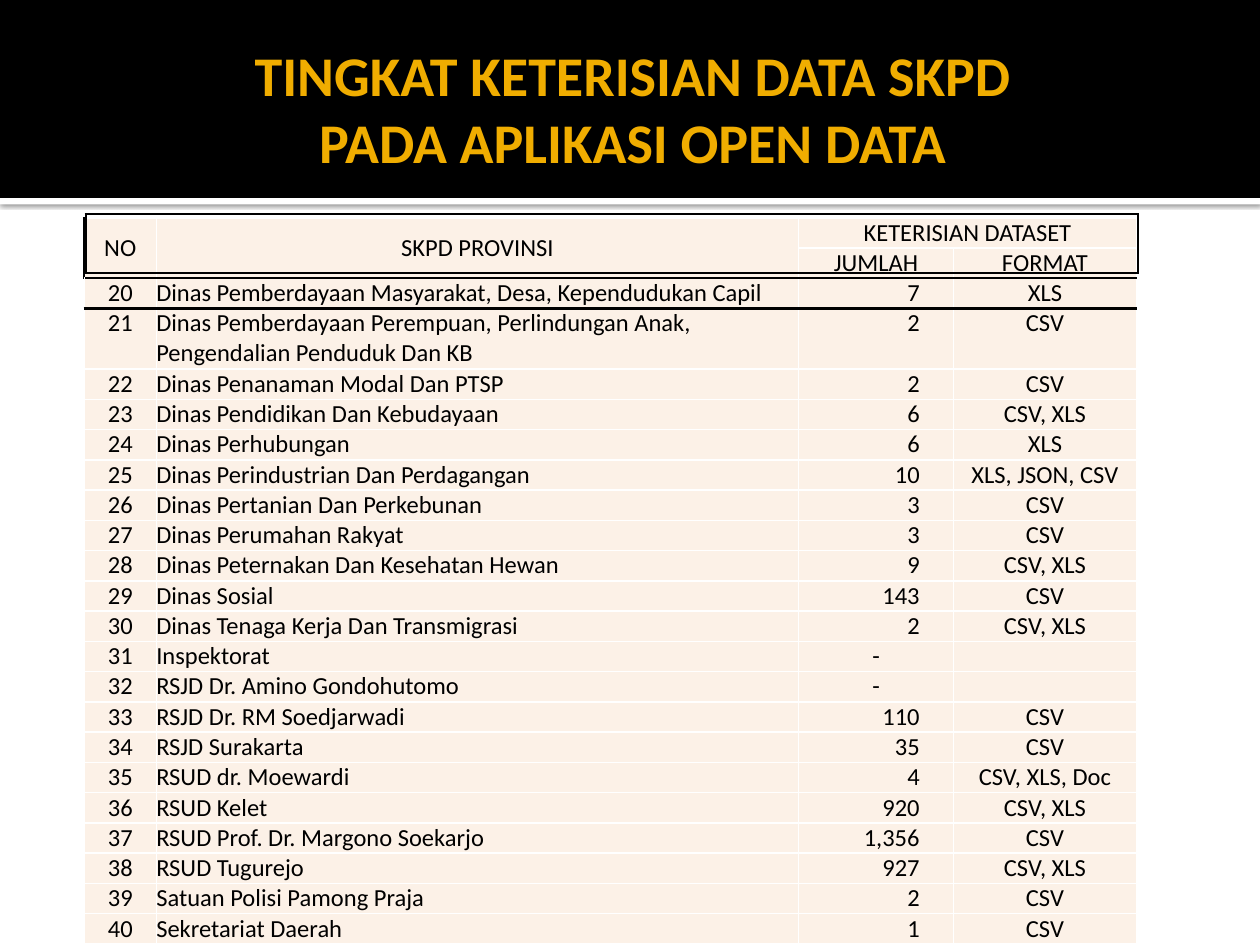
import pptx
import pptx.dml.color
import pptx.enum.shapes
import pptx.enum.text
import pptx.oxml
import pptx.oxml.ns
import pptx.util
from pptx.util import Cm, Pt

COLORS = {"black": "000000", "white": "FFFFFF", "gold": "F0AD00", "cream": "FCF1E7"}
FONT = "Calibri"
ALIGN = pptx.enum.text.PP_ALIGN
ANCHOR = pptx.enum.text.MSO_ANCHOR
ROW_H = 0.61
COL_W = [1.45, 12.95, 3.12, 3.69]
COL_ALIGN = [ALIGN.CENTER, ALIGN.LEFT, ALIGN.RIGHT, ALIGN.CENTER]
FIRST_NO = 20

AGENCIES = [
    ("Dinas Pemberdayaan Masyarakat, Desa, Kependudukan Capil", "7", "XLS"),
    ("Dinas Pemberdayaan Perempuan, Perlindungan Anak, Pengendalian Penduduk Dan KB",
     "2", "CSV"),
    ("Dinas Penanaman Modal Dan PTSP", "2", "CSV"),
    ("Dinas Pendidikan Dan Kebudayaan", "6", "CSV, XLS"),
    ("Dinas Perhubungan", "6", "XLS"),
    ("Dinas Perindustrian Dan Perdagangan", "10", "XLS, JSON, CSV"),
    ("Dinas Pertanian Dan Perkebunan", "3", "CSV"),
    ("Dinas Perumahan Rakyat", "3", "CSV"),
    ("Dinas Peternakan Dan Kesehatan Hewan", "9", "CSV, XLS"),
    ("Dinas Sosial", "143", "CSV"),
    ("Dinas Tenaga Kerja Dan Transmigrasi", "2", "CSV, XLS"),
    ("Inspektorat", "-", ""),
    ("RSJD Dr. Amino Gondohutomo", "-", ""),
    ("RSJD Dr. RM Soedjarwadi", "110", "CSV"),
    ("RSJD Surakarta", "35", "CSV"),
    ("RSUD dr. Moewardi", "4", "CSV, XLS, Doc"),
    ("RSUD Kelet", "920", "CSV, XLS"),
    ("RSUD Prof. Dr. Margono Soekarjo", "1,356", "CSV"),
    ("RSUD Tugurejo", "927", "CSV, XLS"),
    ("Satuan Polisi Pamong Praja", "2", "CSV"),
    ("Sekretariat Daerah", "1", "CSV"),
]


def rgb(name):
    return pptx.dml.color.RGBColor.from_string(COLORS[name])


def add_band(s, top, height, color):
    sp = s.shapes.add_shape(pptx.enum.shapes.MSO_SHAPE.RECTANGLE,
                            0, Cm(top), Cm(25.4), Cm(height))
    sp.shadow.inherit = False
    sp.fill.solid()
    sp.fill.fore_color.rgb = rgb(color)
    sp.line.fill.background()
    return sp


def add_shadow(sp):
    """Give the shape a soft shadow straight below it."""
    effects = sp._element.spPr.find(pptx.oxml.ns.qn("a:effectLst"))
    effects.append(pptx.oxml.parse_xml(
        f'<a:outerShdw {pptx.oxml.ns.nsdecls("a")} blurRad="{Pt(2.5)}" dist="{Pt(0.8)}" '
        f'dir="5400000" rotWithShape="0"><a:srgbClr val="{COLORS["black"]}">'
        '<a:alpha val="60000"/></a:srgbClr></a:outerShdw>'))


def add_title(s, text):
    tf = s.shapes.add_textbox(Cm(1.27), Cm(0.43), Cm(22.86), Cm(3.48)).text_frame
    tf.word_wrap = True
    tf.vertical_anchor = ANCHOR.MIDDLE
    tf.margin_left = Cm(0.25)
    tf.margin_right = tf.margin_top = tf.margin_bottom = Cm(0.13)
    p = tf.paragraphs[0]
    p.text = text
    p.alignment = ALIGN.CENTER
    for r in p.runs:
        r.font.name, r.font.size, r.font.bold = FONT, Pt(32), True
        r.font.color.rgb = rgb("gold")


def set_borders(cell, color, width, **overrides):
    """Line all four sides; overrides such as B=("black", 1.5) change one side."""
    tcPr = cell._tc.get_or_add_tcPr()
    for i, side in enumerate("LRTB"):
        c, w = overrides.get(side, (color, width))
        tcPr.insert(i, pptx.oxml.parse_xml(
            f'<a:ln{side} {pptx.oxml.ns.nsdecls("a")} w="{Pt(w)}"><a:solidFill>'
            f'<a:srgbClr val="{COLORS[c]}"/></a:solidFill></a:ln{side}>'))


def fill_cell(cell, text, align, anchor=ANCHOR.TOP, right=0):
    cell.margin_left = cell.margin_top = cell.margin_bottom = 0
    cell.margin_right = Cm(right)
    cell.vertical_anchor = anchor
    p = cell.text_frame.paragraphs[0]
    p.text = text
    p.alignment = align
    for r in p.runs:
        r.font.name, r.font.size = FONT, Pt(14)
        r.font.color.rgb = rgb("black")
    if not text:
        p._p.get_or_add_endParaRPr().set("sz", "1400")


def add_plain_table(s, left, top, widths, heights):
    table = s.shapes.add_table(len(heights), len(widths), Cm(left), Cm(top),
                               Cm(sum(widths)), Cm(sum(heights))).table
    table.first_row = table.horz_banding = False
    for col, w in zip(table.columns, widths):
        col.width = Cm(w)
    for row, h in zip(table.rows, heights):
        row.height = Cm(h)
    return table


def add_agency_table(s):
    heights = [ROW_H] * 2 + [ROW_H * (2 if len(name) > 60 else 1) for name, _, _ in AGENCIES]
    table = add_plain_table(s, 1.7, 4.39, COL_W, heights)
    rule = ("black", 1.5)
    for r in range(len(heights)):
        for c in range(len(COL_W)):
            cell = table.cell(r, c)
            cell.fill.solid()
            cell.fill.fore_color.rgb = rgb("cream")
            sides = {}
            if r in (1, 2):
                sides["B"] = rule
            if r in (2, 3):
                sides["T"] = rule
            if r < 2 and c == 0:
                sides["L"] = rule
            set_borders(cell, "white", 1, **sides)

    table.cell(0, 0).merge(table.cell(1, 0))
    table.cell(0, 1).merge(table.cell(1, 1))
    table.cell(0, 2).merge(table.cell(0, 3))
    for r, c, text, anchor in [(0, 0, "NO", ANCHOR.MIDDLE),
                               (0, 1, "SKPD PROVINSI", ANCHOR.MIDDLE),
                               (0, 2, "KETERISIAN DATASET", ANCHOR.BOTTOM),
                               (1, 2, "JUMLAH", ANCHOR.BOTTOM),
                               (1, 3, "FORMAT", ANCHOR.BOTTOM)]:
        fill_cell(table.cell(r, c), text, ALIGN.CENTER, anchor)

    for i, agency in enumerate(AGENCIES):
        for c, text in enumerate((str(FIRST_NO + i), *agency)):
            align = ALIGN.CENTER if text == "-" else COL_ALIGN[c]
            right = 0.68 if align == ALIGN.RIGHT else 0
            fill_cell(table.cell(i + 2, c), text, align, right=right)


def add_header_frame(s):
    cell = add_plain_table(s, 1.73, 4.32, [sum(COL_W)], [1.19]).cell(0, 0)
    cell.fill.background()
    set_borders(cell, "black", 1.5)


def main():
    prs = pptx.Presentation()
    prs.slide_width, prs.slide_height = Cm(25.4), Cm(19.05)
    s = prs.slides.add_slide(prs.slide_layouts[6])
    add_shadow(add_band(s, 3.99, 0.13, "white"))
    add_band(s, 0, 3.99, "black")
    add_agency_table(s)
    add_header_frame(s)
    add_title(s, "TINGKAT KETERISIAN DATA SKPD\vPADA APLIKASI OPEN DATA")
    prs.save("out.pptx")


if __name__ == "__main__":
    main()
